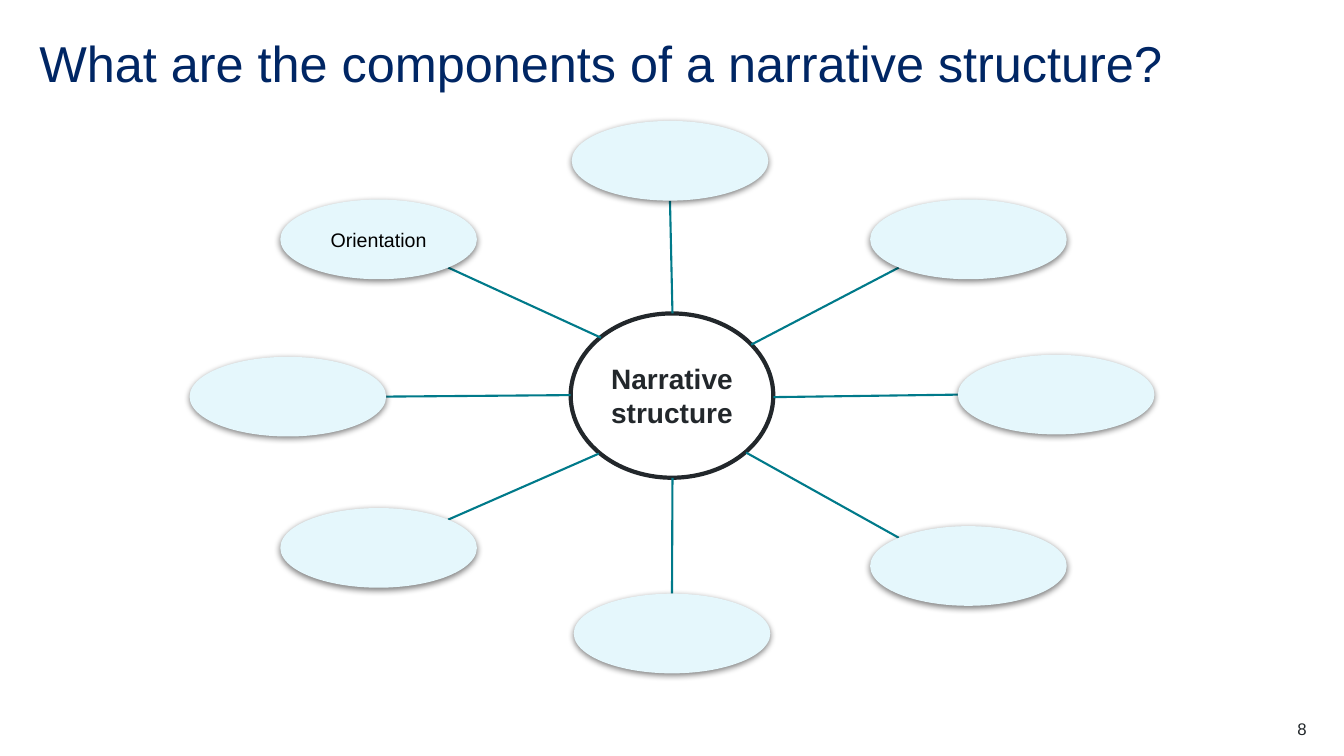
from math import hypot

from lxml import etree
from pptx import Presentation
from pptx.dml.color import RGBColor
from pptx.enum.shapes import MSO_CONNECTOR, MSO_SHAPE
from pptx.enum.text import MSO_ANCHOR, PP_ALIGN
from pptx.oxml.ns import qn
from pptx.util import Inches, Pt

# Content
TITLE = "What are the components of a narrative structure?"
HUB_TEXT = "Narrative structure"
PAGE_NUMBER = "8"
HUB = (5.66, 3.11, 2.01, 1.63)
BUBBLE_SIZE = (1.95, 0.79)

# Each bubble: text, left and top, direction from bubble towards hub, spoke end on the hub
BUBBLES = [
    ("Orientation", (2.78, 1.98), (1, 1), (5.96, 3.35)),
    ("", (5.67, 1.2), (0, 1), (6.67, 3.11)),
    ("", (8.63, 1.98), (-1, 1), (7.45, 3.42)),
    ("", (9.5, 3.52), (-1, 0), (7.67, 3.94)),
    ("", (8.63, 5.22), (-1, -1), (7.4, 4.49)),
    ("", (5.69, 5.89), (0, -1), (6.67, 4.74)),
    ("", (2.78, 5.04), (1, -1), (5.94, 4.5)),
    ("", (1.88, 3.54), (1, 0), (5.66, 3.92)),
]

# Formats
NAVY, INK, TEAL, PALE, WHITE, BLACK = "002664", "22272B", "007A8A", "E5F7FC", "FFFFFF", "000000"
TITLE_FONT = {"name": "Arial", "size": Pt(36), "bold": False}
HUB_FONT = {"name": "Arial", "size": Pt(20), "bold": True}
BUBBLE_FONT = {"name": "Arial", "size": Pt(14), "bold": False}
NUMBER_FONT = {"name": "Arial", "size": Pt(12), "bold": False}
NO_MARGINS = (0, 0, 0, 0)
SHAPE_MARGINS = (0.09, 0.04, 0.09, 0.04)


def color(hex_text):
    return RGBColor.from_string(hex_text)


def write(shape, text, font, ink, margins, anchor, paragraph):
    left, top, right, bottom = (Inches(margin) for margin in margins)
    frame = shape.text_frame
    frame_format = {"word_wrap": True, "vertical_anchor": anchor, "margin_left": left,
                    "margin_top": top, "margin_right": right, "margin_bottom": bottom}
    para = frame.paragraphs[0]
    span = para.add_run()
    span.text = text
    for target, values in ((frame, frame_format), (para, paragraph), (span.font, font)):
        for name, value in values.items():
            setattr(target, name, value)
    span.font.color.rgb = color(ink)


def add_text(page, place, text, font, ink, paragraph):
    box = page.shapes.add_textbox(*map(Inches, place))
    write(box, text, font, ink, NO_MARGINS, MSO_ANCHOR.TOP, paragraph)


def add_ellipse(page, place, fill, text, font, ink):
    ellipse = page.shapes.add_shape(MSO_SHAPE.OVAL, *map(Inches, place))
    ellipse.shadow.inherit = False
    ellipse.fill.solid()
    ellipse.fill.fore_color.rgb = color(fill)
    ellipse.line.fill.background()
    if text:
        write(ellipse, text, font, ink, SHAPE_MARGINS, MSO_ANCHOR.MIDDLE,
              {"alignment": PP_ALIGN.CENTER})
    return ellipse


def add_shadow(shape):
    effects = shape._element.spPr.find(qn("a:effectLst"))
    shadow = etree.SubElement(effects, qn("a:outerShdw"), blurRad=str(Pt(4.5)),
                              dist=str(Pt(1.5)), dir="5400000", algn="t", rotWithShape="0")
    tint = etree.SubElement(shadow, qn("a:srgbClr"), val=BLACK)
    etree.SubElement(tint, qn("a:alpha"), val="50000")


def add_spoke(page, start, end):
    spoke = page.shapes.add_connector(MSO_CONNECTOR.STRAIGHT, *map(Inches, start + end))
    spoke.line.color.rgb = color(TEAL)
    spoke.line.width = Pt(1.5)
    etree.SubElement(spoke._element.spPr, qn("a:effectLst"))


def bubble_edge(corner, direction):
    """Point on the bubble's outline in the given direction."""
    length = hypot(*direction)
    return tuple(start + size / 2 * (1 + step / length)
                 for start, size, step in zip(corner, BUBBLE_SIZE, direction))


def main():
    deck = Presentation()
    deck.slide_width, deck.slide_height = Inches(13.33), Inches(7.5)
    page = deck.slides.add_slide(deck.slide_layouts[6])

    # Title
    add_text(page, (0.39, 0.39, 12.56, 0.6), TITLE, TITLE_FONT, NAVY, {"line_spacing": 0.9})

    # Hub
    hub = add_ellipse(page, HUB, WHITE, HUB_TEXT, HUB_FONT, INK)
    hub.line.color.rgb = color(INK)
    hub.line.width = Pt(3)

    # Spokes, then the bubbles over them
    for _, corner, direction, hub_end in BUBBLES:
        add_spoke(page, hub_end, bubble_edge(corner, direction))
    for text, corner, _, _ in BUBBLES:
        add_shadow(add_ellipse(page, corner + BUBBLE_SIZE, PALE, text, BUBBLE_FONT, BLACK))

    # Page number
    add_text(page, (12.17, 7.13, 0.79, 0.2), PAGE_NUMBER, NUMBER_FONT, INK,
             {"alignment": PP_ALIGN.RIGHT})

    deck.save("out.pptx")


if __name__ == "__main__":
    main()
